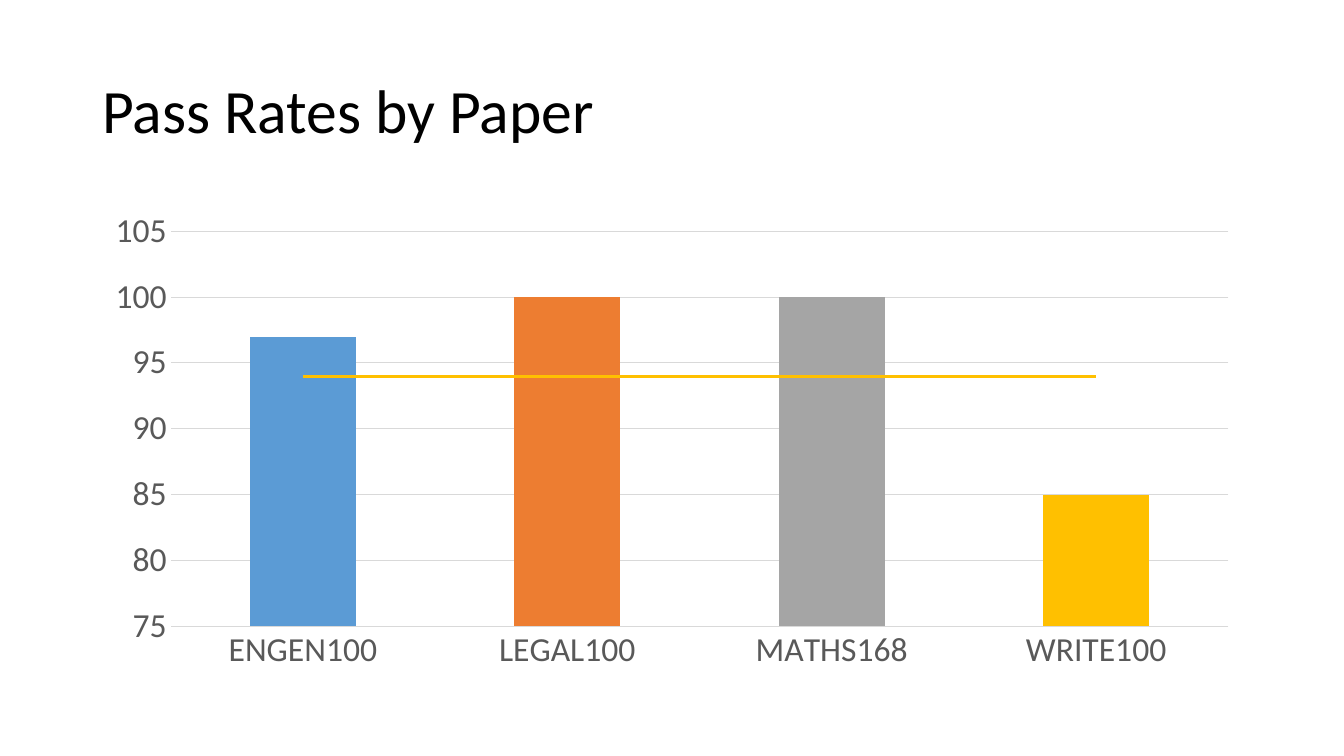
from copy import deepcopy

from lxml.etree import SubElement
from pptx import Presentation
from pptx.chart.data import CategoryChartData
from pptx.dml.color import RGBColor
from pptx.enum.chart import XL_CHART_TYPE, XL_MARKER_STYLE, XL_TICK_MARK
from pptx.enum.text import MSO_ANCHOR
from pptx.oxml.ns import qn
from pptx.util import Cm, Pt

# Content
TITLE = "Pass Rates by Paper"
PASS_RATES = {"ENGEN100": 97, "LEGAL100": 100, "MATHS168": 100, "WRITE100": 85}
AVERAGE = 94
AXIS_MIN, AXIS_MAX, AXIS_STEP = 75, 105, 5

THEME = {
    "font": "Calibri",
    "title_size": Pt(44),
    "axis_size": Pt(24),
    "title": RGBColor.from_string("000000"),
    "axis": RGBColor.from_string("595959"),
    "grid": RGBColor.from_string("D9D9D9"),
    "average": RGBColor.from_string("FFC000"),
    "bars": [RGBColor.from_string(c) for c in ("5B9BD5", "ED7D31", "A5A5A5", "FFC000")],
}

# Layout
SLIDE_W, SLIDE_H = Cm(33.87), Cm(19.05)
LEFT = Cm(2.33)
WIDTH = SLIDE_W - 2 * LEFT
TITLE_TOP, TITLE_H = Cm(1.01), Cm(3.68)
CHART_TOP, CHART_H = Cm(5.07), Cm(12.09)


def set_font(font, size, color):
    font.name, font.size = THEME["font"], size
    font.color.rgb = color


def add_title(s):
    tf = s.shapes.add_textbox(LEFT, TITLE_TOP, WIDTH, TITLE_H).text_frame
    tf.word_wrap = True
    tf.vertical_anchor = MSO_ANCHOR.MIDDLE
    p = tf.paragraphs[0]
    p.line_spacing = 0.9
    r = p.add_run()
    r.text = TITLE
    set_font(r.font, THEME["title_size"], THEME["title"])


def move_to_line(bar_chart):
    """Move the second series to a line chart on the same axes."""
    line_chart = bar_chart.makeelement(qn("c:lineChart"))
    SubElement(line_chart, qn("c:grouping")).set("val", "standard")
    SubElement(line_chart, qn("c:varyColors")).set("val", "0")
    ser = bar_chart.findall(qn("c:ser"))[1]
    for bar_only in ser.findall(qn("c:invertIfNegative")):
        ser.remove(bar_only)
    line_chart.append(ser)
    SubElement(line_chart, qn("c:marker")).set("val", "1")
    for ax_id in bar_chart.findall(qn("c:axId")):
        line_chart.append(deepcopy(ax_id))
    bar_chart.addnext(line_chart)


def add_pass_rate_chart(s):
    data = CategoryChartData()
    data.categories = list(PASS_RATES)
    data.add_series("Series 1", list(PASS_RATES.values()))
    data.add_series("Series 2", [AVERAGE] * len(PASS_RATES))
    chart = s.shapes.add_chart(XL_CHART_TYPE.COLUMN_CLUSTERED, LEFT, CHART_TOP,
                               WIDTH, CHART_H, data).chart
    chart.has_title = chart.has_legend = False
    set_font(chart.font, THEME["axis_size"], THEME["axis"])

    # Axes
    for axis in (chart.category_axis, chart.value_axis):
        axis.major_tick_mark = axis.minor_tick_mark = XL_TICK_MARK.NONE
        axis.format.line.fill.background()
        set_font(axis.tick_labels.font, THEME["axis_size"], THEME["axis"])
    values = chart.value_axis
    values.minimum_scale, values.maximum_scale = AXIS_MIN, AXIS_MAX
    values.major_unit = AXIS_STEP
    grid = values.major_gridlines.format.line
    grid.color.rgb, grid.width = THEME["grid"], Pt(0.75)

    # Bars, one colour for each paper
    bars = chart.plots[0]
    bars.gap_width = 150
    bars.vary_by_categories = False
    for i, color in enumerate(THEME["bars"]):
        fill = bars.series[0].points[i].format.fill
        fill.solid()
        fill.fore_color.rgb = color

    # Average line
    move_to_line(bars._element)
    average = chart.plots[1].series[0]
    average.smooth = False
    average.marker.style = XL_MARKER_STYLE.NONE
    line = average.format.line
    line.color.rgb, line.width = THEME["average"], Pt(2.25)


def main():
    prs = Presentation()
    prs.slide_width, prs.slide_height = SLIDE_W, SLIDE_H
    s = prs.slides.add_slide(prs.slide_layouts[6])
    add_title(s)
    add_pass_rate_chart(s)
    prs.save("out.pptx")


if __name__ == "__main__":
    main()
